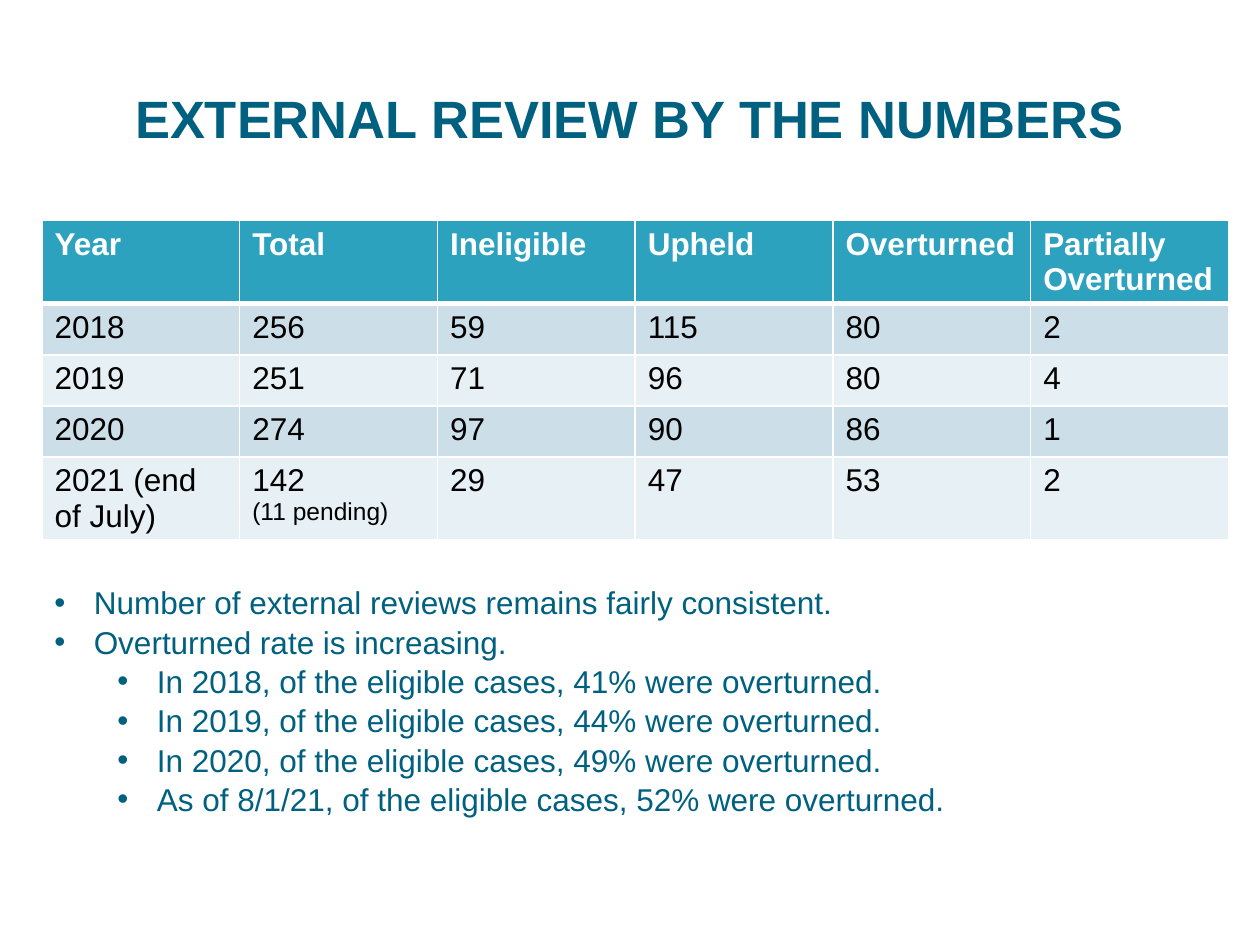
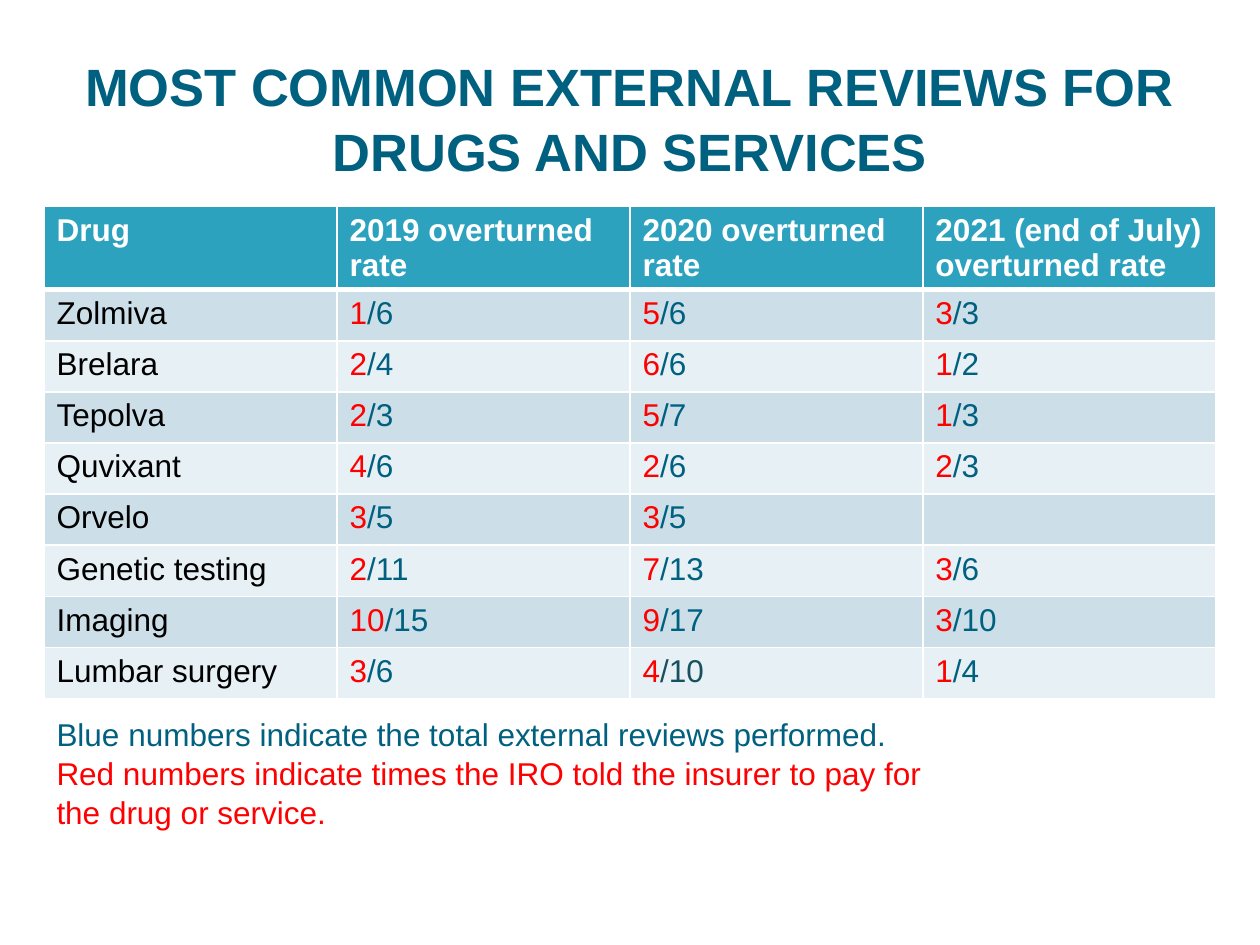
from lxml.etree import SubElement
from pptx import Presentation
from pptx.dml.color import RGBColor
from pptx.enum.text import MSO_ANCHOR, MSO_AUTO_SIZE, PP_ALIGN
from pptx.oxml.ns import qn
from pptx.util import Pt

TEAL = RGBColor(0x00, 0x60, 0x7F)
HEADER = RGBColor(0x2D, 0xA2, 0xBF)
BANDS = RGBColor(0xCC, 0xDF, 0xE8), RGBColor(0xE7, 0xF0, 0xF4)
WHITE = RGBColor(0xFF, 0xFF, 0xFF)
BLACK = RGBColor(0x00, 0x00, 0x00)
RED = RGBColor(0xFF, 0x00, 0x00)
SLATE = RGBColor(0x17, 0x51, 0x60)
FONT = "Arial"
LINE_SPACING = 1.04
HEADER_H, ROW_H, SHORT_ROW_H = 46.8, 29.2, 27.4

REVIEW_HEADS = ["Year", "Total", "Ineligible", "Upheld", "Overturned",
                "Partially Overturned"]
REVIEWS = [
    ["2018", "256", "59", "115", "80", "2"],
    ["2019", "251", "71", "96", "80", "4"],
    ["2020", "274", "97", "90", "86", "1"],
    ["2021 (end of July)", "142\n(11 pending)", "29", "47", "53", "2"],
]
FINDINGS = [
    (0, "Number of external reviews remains fairly consistent."),
    (0, "Overturned rate is increasing."),
    (1, "In 2018, of the eligible cases, 41% were overturned."),
    (1, "In 2019, of the eligible cases, 44% were overturned."),
    (1, "In 2020, of the eligible cases, 49% were overturned."),
    (1, "As of 8/1/21, of the eligible cases, 52% were overturned."),
]
DRUG_HEADS = ["Drug", "2019 overturned rate", "2020 overturned rate",
              "2021 (end of July) overturned rate"]
DRUGS = [
    ["Zolmiva", "1/6", "5/6", "3/3"],
    ["Brelara", "2/4", "6/6", "1/2"],
    ["Tepolva", "2/3", "5/7", "1/3"],
    ["Quvixant", "4/6", "2/6", "2/3"],
    ["Orvelo", "3/5", "3/5", ""],
    ["Genetic testing", "2/11", "7/13", "3/6"],
    ["Imaging", "10/15", "9/17", "3/10"],
    ["Lumbar surgery", "3/6", "4/10", "1/4"],
]
LEGEND = [
    ("Blue numbers indicate the total external reviews performed.", TEAL),
    ("Red numbers indicate times the IRO told the insurer to pay for "
     "the drug or service.", RED),
]


def add_run(p, text, size=18, color=TEAL, bold=False):
    r = p.add_run()
    r.text = text
    r.font.name, r.font.size, r.font.bold = FONT, Pt(size), bold
    r.font.color.rgb = color


def paragraphs(tf, count):
    """Return the first paragraph of a frame and as many new ones as needed."""
    return [tf.paragraphs[0]] + [tf.add_paragraph() for _ in range(count - 1)]


def add_title_slide(prs, title):
    s = prs.slides.add_slide(prs.slide_layouts[5])
    sp = s.shapes.title
    sp.left, sp.top, sp.width, sp.height = Pt(36), Pt(21.6), Pt(648), Pt(90)
    tf = sp.text_frame
    tf.word_wrap, tf.auto_size = True, MSO_AUTO_SIZE.NONE
    tf.vertical_anchor = MSO_ANCHOR.MIDDLE
    p = tf.paragraphs[0]
    p.alignment, p.line_spacing = PP_ALIGN.CENTER, LINE_SPACING
    add_run(p, title, size=30, bold=True)
    return s


def set_borders(cell, top=1, bottom=1):
    tc_pr = cell._tc.get_or_add_tcPr()
    for side, width in (("L", 1), ("R", 1), ("T", top), ("B", bottom)):
        ln = SubElement(tc_pr, qn(f"a:ln{side}"), w=str(Pt(width)))
        fill = SubElement(ln, qn("a:solidFill"))
        SubElement(fill, qn("a:srgbClr"), val=str(WHITE))


def write_plain(cell, text):
    """Write one paragraph a line; lines after the first are smaller."""
    lines = text.split("\n")
    for i, p in enumerate(paragraphs(cell.text_frame, len(lines))):
        add_run(p, lines[i], size=14 if i else 18, color=BLACK)


def write_rate(cell, text):
    """Write overturned/total with the two counts in different colours."""
    overturned, slash, total = text.partition("/")
    p = cell.text_frame.paragraphs[0]
    add_run(p, overturned, color=RED)
    add_run(p, slash + total, color=SLATE if text == "4/10" else TEAL)


def add_banded_table(s, box, heads, rows, heights, write_value):
    left, top, width = box
    table = s.shapes.add_table(len(rows) + 1, len(heads), Pt(left), Pt(top),
                               Pt(width), Pt(sum(heights))).table
    for col in table.columns:
        col.width = Pt(width / len(heads))
    for row, height in zip(table.rows, heights):
        row.height = Pt(height)
    for i, texts in enumerate([heads] + rows):
        for j, text in enumerate(texts):
            cell = table.cell(i, j)
            set_borders(cell, top=3 if i == 1 else 1, bottom=3 if i == 0 else 1)
            cell.fill.solid()
            cell.fill.fore_color.rgb = BANDS[(i - 1) % 2] if i else HEADER
            if i == 0:
                add_run(cell.text_frame.paragraphs[0], text, color=WHITE, bold=True)
            elif j == 0:
                write_plain(cell, text)
            elif text:
                write_value(cell, text)


def add_text_frame(s, box):
    tf = s.shapes.add_textbox(*map(Pt, box)).text_frame
    tf.word_wrap = True
    return tf


def add_bullets(s, box, items):
    tf = add_text_frame(s, box)
    for p, (level, text) in zip(paragraphs(tf, len(items)), items):
        p.level, p.line_spacing = level, LINE_SPACING
        p_pr = p._p.get_or_add_pPr()
        p_pr.set("marL", str(Pt(22.5 + 36 * level)))
        p_pr.set("indent", str(Pt(-22.5)))
        SubElement(SubElement(p_pr, qn("a:buClr")), qn("a:srgbClr"), val=str(TEAL))
        SubElement(p_pr, qn("a:buFont"), typeface=FONT)
        SubElement(p_pr, qn("a:buChar"), char="•")
        add_run(p, text)


def add_legend(s, box, items):
    tf = add_text_frame(s, box)
    for p, (text, color) in zip(paragraphs(tf, len(items)), items):
        p.line_spacing = LINE_SPACING
        add_run(p, text, color=color)


def build_numbers_slide(prs):
    s = add_title_slide(prs, "EXTERNAL REVIEW BY THE NUMBERS")
    heights = [HEADER_H] + [ROW_H] * 3 + [HEADER_H]
    add_banded_table(s, (24, 126, 678), REVIEW_HEADS, REVIEWS, heights, write_plain)
    add_bullets(s, (24, 329, 528, 138), FINDINGS)


def build_drugs_slide(prs):
    s = add_title_slide(prs, "MOST COMMON EXTERNAL REVIEWS FOR DRUGS AND SERVICES")
    heights = [HEADER_H] + [ROW_H if all(row) else SHORT_ROW_H for row in DRUGS]
    add_banded_table(s, (25.2, 118, 669.6), DRUG_HEADS, DRUGS, heights, write_rate)
    add_legend(s, (25.2, 404, 516, 73), LEGEND)


def main():
    prs = Presentation()
    prs.slide_width, prs.slide_height = Pt(720), Pt(540)
    build_numbers_slide(prs)
    build_drugs_slide(prs)
    prs.save("out.pptx")


if __name__ == "__main__":
    main()
